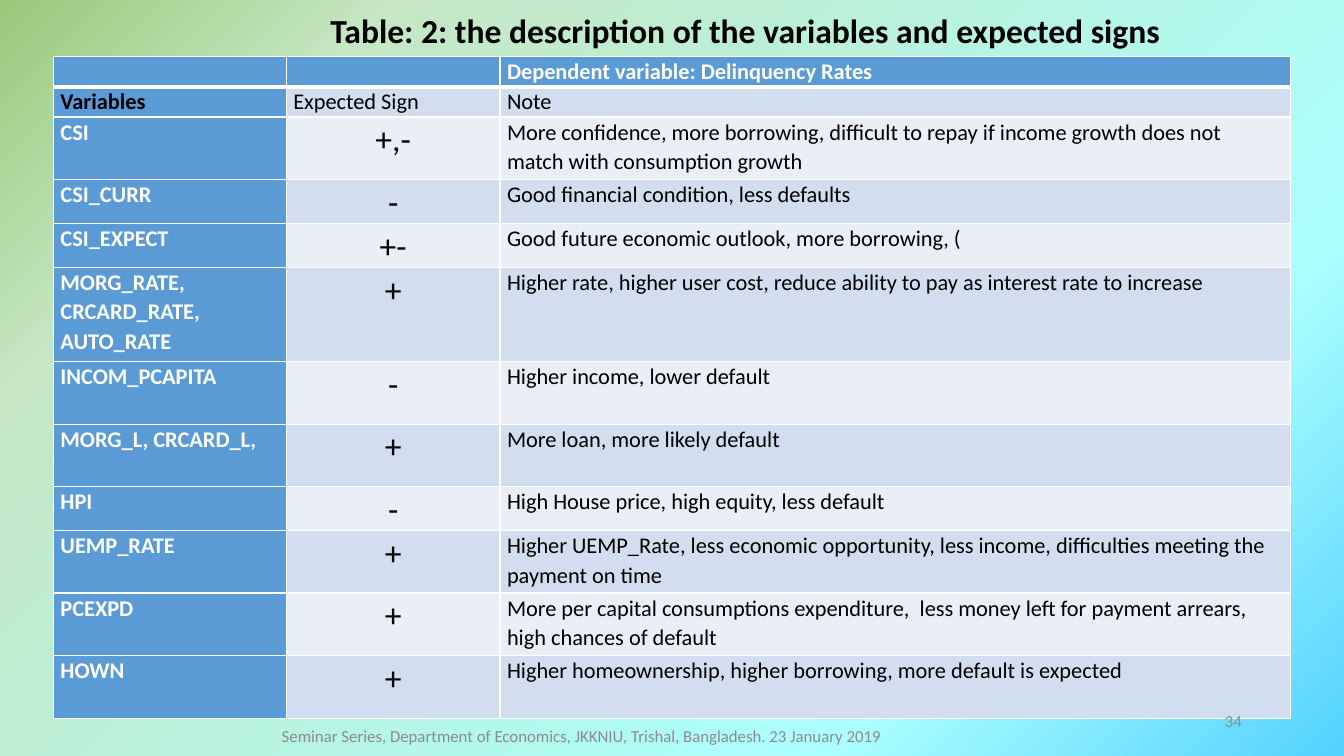
import lxml.etree
import pptx
import pptx.dml.color
import pptx.enum.text
import pptx.oxml.ns
import pptx.util

Pt = pptx.util.Pt
ALIGN = pptx.enum.text.PP_ALIGN
ANCHOR = pptx.enum.text.MSO_ANCHOR
qn = pptx.oxml.ns.qn

BLUE, BAND_DARK, BAND_LIGHT = "5B9BD5", "D2DEEF", "EAEFF7"
WHITE, BLACK, GREY = "FFFFFF", "000000", "8C8C8C"

# Height of a row by its number of text lines; SIGN fits one large sign
ONE, SIGN, TWO, THREE = 21.6, 31.3, 44.7, 67.4
COLUMN_WIDTHS = [166.3, 152.7, 564.5]

HEADINGS = [
    (ONE, "", "", "Dependent variable: Delinquency Rates"),
    (ONE, "Variables", "Expected Sign", "Note"),
]
VARIABLES = [
    (TWO, "CSI", "+,-", "More confidence, more borrowing, difficult to repay if income "
     "growth does not match with consumption growth"),
    (SIGN, "CSI_CURR", "-", "Good financial condition, less defaults"),
    (SIGN, "CSI_EXPECT", "+-", "Good future economic outlook, more borrowing, ("),
    (THREE, "MORG_RATE, CRCARD_RATE, AUTO_RATE", "+", "Higher rate, higher user cost, "
     "reduce ability to pay as interest rate to increase"),
    (TWO, "INCOM_PCAPITA", "-", "Higher income, lower default"),
    (TWO, "MORG_L, CRCARD_L,", "+", "More loan, more likely default"),
    (SIGN, "HPI", "-", "High House price, high equity, less default"),
    (TWO, "UEMP_RATE", "+", "Higher UEMP_Rate, less economic opportunity, less income, "
     "difficulties meeting the payment on time"),
    (TWO, "PCEXPD", "+", "More per capital consumptions expenditure,  less money left for "
     "payment arrears, high chances of default"),
    (TWO, "HOWN", "+", "Higher homeownership, higher borrowing, more default is expected"),
]


def color(value):
    return pptx.dml.color.RGBColor.from_string(value)


def set_all(target, values):
    for name, value in values.items():
        setattr(target, name, value)


def write(frame, text, size, ink, bold=False, align=ALIGN.LEFT, spacing=1.0):
    para = frame.paragraphs[0]
    set_all(para, {"alignment": align, "line_spacing": spacing})
    span = para.add_run()
    span.text = text
    set_all(span.font, {"name": "Calibri", "size": Pt(size), "bold": bold})
    span.font.color.rgb = color(ink)


def add_background(page):
    page.background.fill.gradient()
    gradient = page.element.find(".//" + qn("a:gradFill"))
    for child in list(gradient):
        gradient.remove(child)
    stops = lxml.etree.SubElement(gradient, qn("a:gsLst"))
    for place, value in [(0, "53D2FF"), (25, "ACFFFE"), (81, "C5E7C3"), (100, "9AC87A")]:
        stop = lxml.etree.SubElement(stops, qn("a:gs"), pos=str(place * 1000))
        lxml.etree.SubElement(stop, qn("a:srgbClr"), val=value)
    # Circles spread from the bottom right corner
    circle = lxml.etree.SubElement(gradient, qn("a:path"), {"path": "circle"})
    lxml.etree.SubElement(circle, qn("a:fillToRect"), l="100000", t="100000")


def add_label(page, box, text, size, ink, bold=False, align=ALIGN.CENTER):
    frame = page.shapes.add_textbox(*map(Pt, box)).text_frame
    set_all(frame, {"word_wrap": True, "vertical_anchor": ANCHOR.MIDDLE})
    write(frame, text, size, ink, bold, align)


def add_borders(cell, bottom, top):
    properties = cell._tc.get_or_add_tcPr()
    for side, width in {"L": 1, "R": 1, "T": top, "B": bottom}.items():
        line = lxml.etree.SubElement(properties, qn("a:ln" + side), w=str(Pt(width)))
        fill = lxml.etree.SubElement(line, qn("a:solidFill"))
        lxml.etree.SubElement(fill, qn("a:srgbClr"), val=WHITE)


def cell_format(row, column):
    """Return the fill and the text format of a cell."""
    band = BAND_LIGHT if row % 2 == 0 else BAND_DARK
    fill = BLUE if row == 0 or column == 0 else band
    strong = fill == BLUE
    is_sign = column == 1 and row >= len(HEADINGS)
    return fill, {
        "size": 24 if is_sign else 16,
        "ink": WHITE if strong and (row, column) != (1, 0) else BLACK,
        "bold": strong,
        "align": ALIGN.CENTER if is_sign else ALIGN.LEFT,
        "spacing": 1.07,
    }


def add_variable_table(page, left, top):
    rows = HEADINGS + VARIABLES
    width, height = sum(COLUMN_WIDTHS), sum(row[0] for row in rows)
    table = page.shapes.add_table(
        len(rows), len(COLUMN_WIDTHS), Pt(left), Pt(top), Pt(width), Pt(height)).table
    for column, column_width in zip(table.columns, COLUMN_WIDTHS):
        column.width = Pt(column_width)
    for row, (row_height, *texts) in enumerate(rows):
        table.rows[row].height = Pt(row_height)
        for column, text in enumerate(texts):
            cell = table.cell(row, column)
            set_all(cell, {"margin_left": Pt(5), "margin_right": Pt(5),
                           "margin_top": 0, "margin_bottom": 0})
            add_borders(cell, bottom=3 if row == 0 else 1, top=3 if row == 1 else 1)
            fill, text_format = cell_format(row, column)
            cell.fill.solid()
            cell.fill.fore_color.rgb = color(fill)
            write(cell.text_frame, text, **text_format)


def main():
    deck = pptx.Presentation()
    set_all(deck, {"slide_width": Pt(960), "slide_height": Pt(540)})
    page = deck.slides.add_slide(deck.slide_layouts[6])
    add_background(page)

    # Table, footer, title and page number
    add_variable_table(page, 38.2, 40.3)
    add_label(page, (147.6, 511.2, 538.6, 28.8),
              "Seminar Series, Department of Economics, JKKNIU, Trishal, Bangladesh. "
              "23 January 2019 ", 12, GREY)
    add_label(page, (147.6, 3.6, 769.7, 36),
              "Table: 2: the description of the variables and expected signs",
              24, BLACK, bold=True)
    add_label(page, (678.2, 500.4, 216, 28.8), "34", 12, GREY, align=ALIGN.RIGHT)

    deck.save("out.pptx")


if __name__ == "__main__":
    main()
